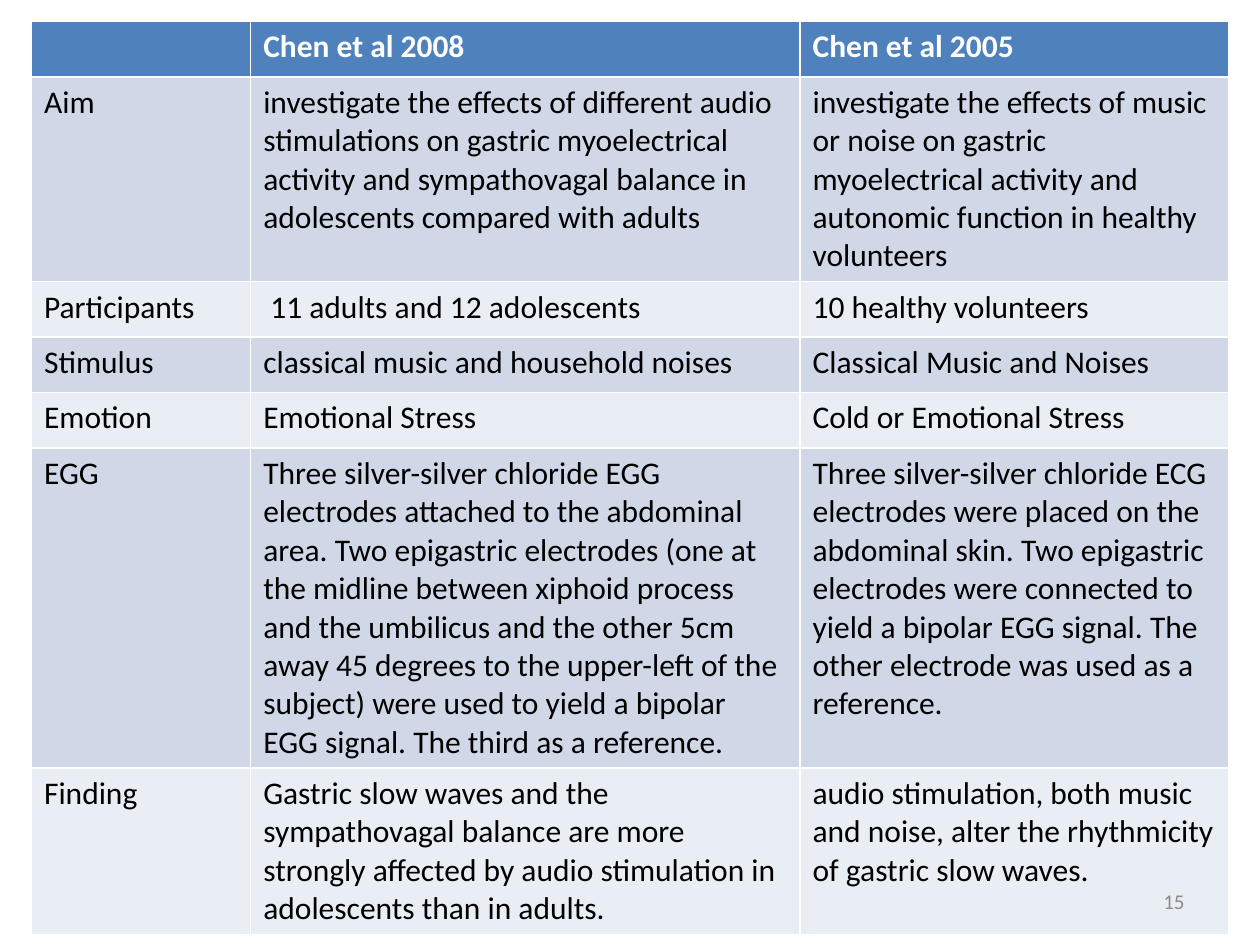
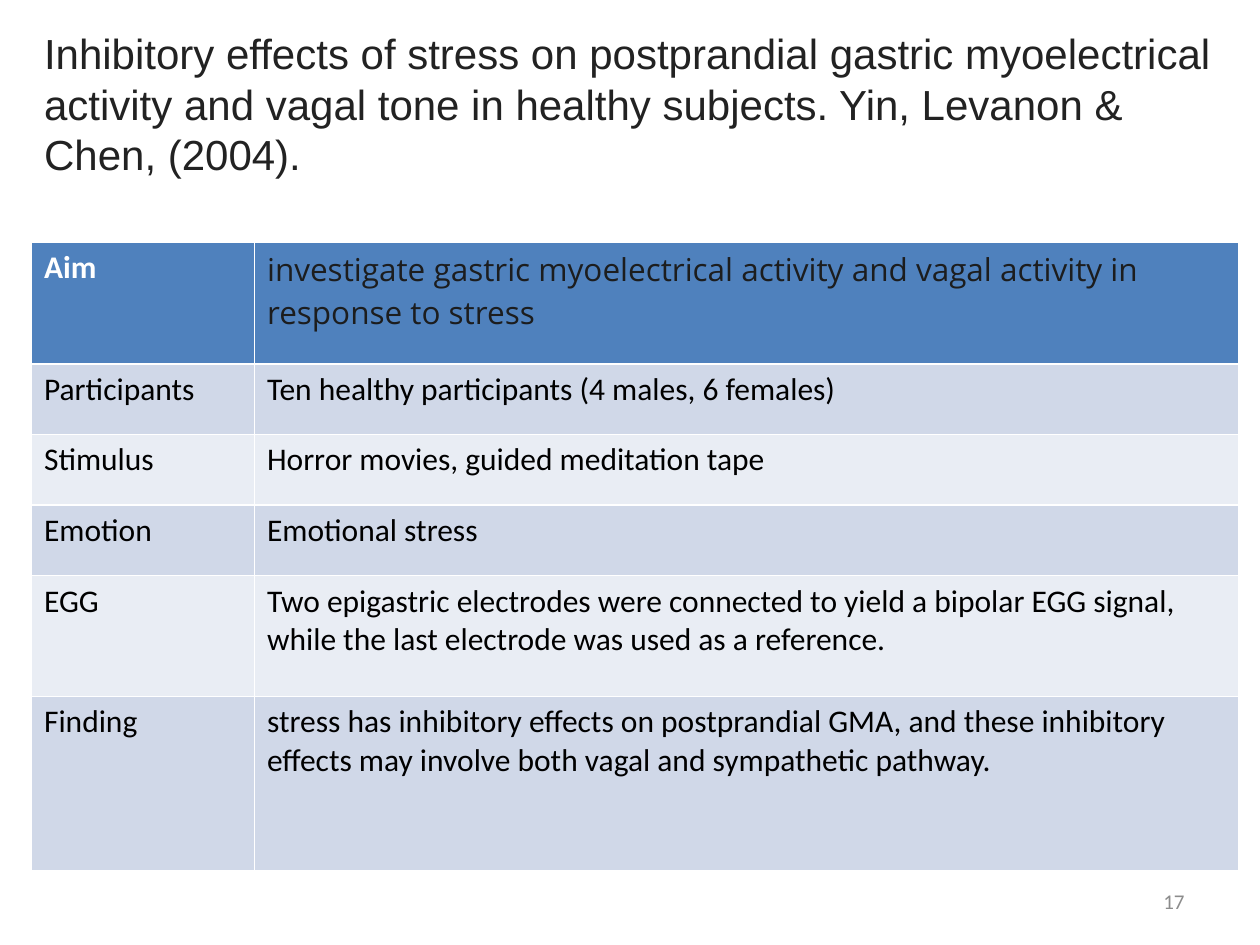
from dataclasses import dataclass

from pptx import Presentation
from pptx.dml.color import RGBColor
from pptx.enum.text import MSO_ANCHOR, MSO_AUTO_SIZE, PP_ALIGN
from pptx.oxml.ns import qn
from pptx.slide import Slide
from pptx.util import Inches, Pt

RIGHT = PP_ALIGN.RIGHT
MIDDLE = MSO_ANCHOR.MIDDLE
NO_AUTOFIT = MSO_AUTO_SIZE.NONE

HEADER_BLUE = RGBColor(0x4F, 0x81, 0xBD)
BANDS = (RGBColor(0xD0, 0xD8, 0xE8), RGBColor(0xE9, 0xED, 0xF4))
WHITE = RGBColor(0xFF, 0xFF, 0xFF)
BLACK = RGBColor(0, 0, 0)
CITATION_GREY = RGBColor(0x22, 0x22, 0x22)
AIM_GREY = RGBColor(0x1C, 0x1D, 0x1E)
NUMBER_GREY = RGBColor(0x8C, 0x8C, 0x8C)

TABLE_FONT = "Calibri"
LEFT = Inches(0.25)
TOP = Inches(0.17)
CONTENT_LAYOUT, BLANK_LAYOUT = 1, 6


@dataclass(frozen=True)
class StudyTable:
    top: float
    col_widths: tuple[float, ...]
    row_heights: tuple[float, ...]
    rows: tuple[tuple[str, ...], ...]


COMPARISON = StudyTable(
    top=0.17,
    col_widths=(1.74, 4.36, 3.4),
    row_heights=(0.44,) * 7,
    rows=(
        ("", "Chen et al 2008", "Chen et al 2005"),
        ("Aim",
         "investigate the effects of different audio stimulations on gastric "
         "myoelectrical activity and sympathovagal balance in adolescents "
         "compared with adults",
         "investigate the effects of music or noise on gastric myoelectrical "
         "activity and autonomic function in healthy volunteers"),
        ("Participants", " 11 adults and 12 adolescents", "10 healthy volunteers"),
        ("Stimulus", "classical music and household noises",
         "Classical Music and Noises"),
        ("Emotion", "Emotional Stress", "Cold or Emotional Stress"),
        ("EGG",
         "Three silver-silver chloride EGG electrodes attached to the abdominal "
         "area. Two epigastric electrodes (one at the midline between xiphoid "
         "process and the umbilicus and the other 5cm away 45 degrees to the "
         "upper-left of the subject) were used to yield a bipolar EGG signal. "
         "The third as a reference.",
         "Three silver-silver chloride ECG electrodes were placed on the "
         "abdominal skin. Two epigastric electrodes were connected to yield a "
         "bipolar EGG signal. The other electrode was used as a reference."),
        ("Finding",
         "Gastric slow waves and the sympathovagal balance are more strongly "
         "affected by audio stimulation in adolescents than in adults.",
         "audio stimulation, both music and noise, alter the rhythmicity of "
         "gastric slow waves."),
    ),
)

STRESS_STUDY = StudyTable(
    top=1.92,
    col_widths=(1.77, 7.81),
    row_heights=(0.97, 0.56, 0.56, 0.56, 0.96, 1.38),
    rows=(
        ("Aim", "investigate gastric myoelectrical activity and vagal activity "
                "in response to stress"),
        ("Participants", "Ten healthy participants (4 males, 6 females)"),
        ("Stimulus", "Horror movies, guided meditation tape"),
        ("Emotion", "Emotional stress"),
        ("EGG", "Two epigastric electrodes were connected to yield a bipolar EGG "
                "signal, while the last electrode was used as a reference."),
        ("Finding", "stress has inhibitory effects on postprandial GMA, and these "
                    "inhibitory effects may involve both vagal and sympathetic "
                    "pathway."),
    ),
)

CITATION = ("Inhibitory effects of stress on postprandial gastric myoelectrical "
            "activity and vagal tone in healthy subjects. Yin, Levanon & Chen, "
            "(2004).")


def style_font(p, name: str, size: int, color: RGBColor, bold: bool = False) -> None:
    p.font.name = name
    p.font.size = Pt(size)
    p.font.color.rgb = color
    p.font.bold = bold


def add_study_table(slide: Slide, study: StudyTable):
    frame = slide.shapes.add_table(
        len(study.rows), len(study.col_widths), LEFT, Inches(study.top),
        Inches(sum(study.col_widths)), Inches(sum(study.row_heights)))
    table = frame.table
    for column, width in zip(table.columns, study.col_widths):
        column.width = Inches(width)
    for i, (row, height) in enumerate(zip(table.rows, study.row_heights)):
        row.height = Inches(height)
        is_header = i == 0
        for cell, text in zip(row.cells, study.rows[i]):
            cell.fill.solid()
            cell.fill.fore_color.rgb = HEADER_BLUE if is_header else BANDS[(i - 1) % 2]
            cell.text = text
            style_font(cell.text_frame.paragraphs[0], TABLE_FONT, 18,
                       WHITE if is_header else BLACK, is_header)
    return table


def add_slide_number(slide: Slide, number: int) -> None:
    box = slide.shapes.add_textbox(Inches(7.17), Inches(6.95), Inches(2.33), Inches(0.4))
    tf = box.text_frame
    tf.word_wrap = True
    tf.vertical_anchor = MIDDLE
    p = tf.paragraphs[0]
    p.text = str(number)
    p.alignment = RIGHT
    style_font(p, TABLE_FONT, 12, NUMBER_GREY)


def fill_citation(slide: Slide) -> None:
    """Put the study's citation in the body placeholder, without a bullet."""
    title = slide.shapes.title
    title.element.getparent().remove(title.element)
    body = slide.placeholders[1]
    body.left, body.top = LEFT, TOP
    body.width, body.height = Inches(9.58), Inches(7.17)
    tf = body.text_frame
    tf.auto_size = NO_AUTOFIT
    p = tf.paragraphs[0]
    p.text = CITATION
    style_font(p, "Arial", 24, CITATION_GREY)
    pPr = p._p.get_or_add_pPr()
    pPr.set("marL", "0")
    pPr.set("indent", "0")
    pPr.insert(0, pPr.makeelement(qn("a:buNone"), {}))


def build_comparison_slide(prs) -> None:
    slide = prs.slides.add_slide(prs.slide_layouts[BLANK_LAYOUT])
    add_study_table(slide, COMPARISON)
    add_slide_number(slide, 15)


def build_stress_slide(prs) -> None:
    slide = prs.slides.add_slide(prs.slide_layouts[CONTENT_LAYOUT])
    fill_citation(slide)
    table = add_study_table(slide, STRESS_STUDY)
    style_font(table.cell(0, 1).text_frame.paragraphs[0], "Open Sans", 18, AIM_GREY)
    add_slide_number(slide, 17)


def main() -> None:
    prs = Presentation()
    prs.slide_width, prs.slide_height = Inches(10), Inches(7.5)
    build_comparison_slide(prs)
    build_stress_slide(prs)
    prs.save("out.pptx")


if __name__ == "__main__":
    main()
